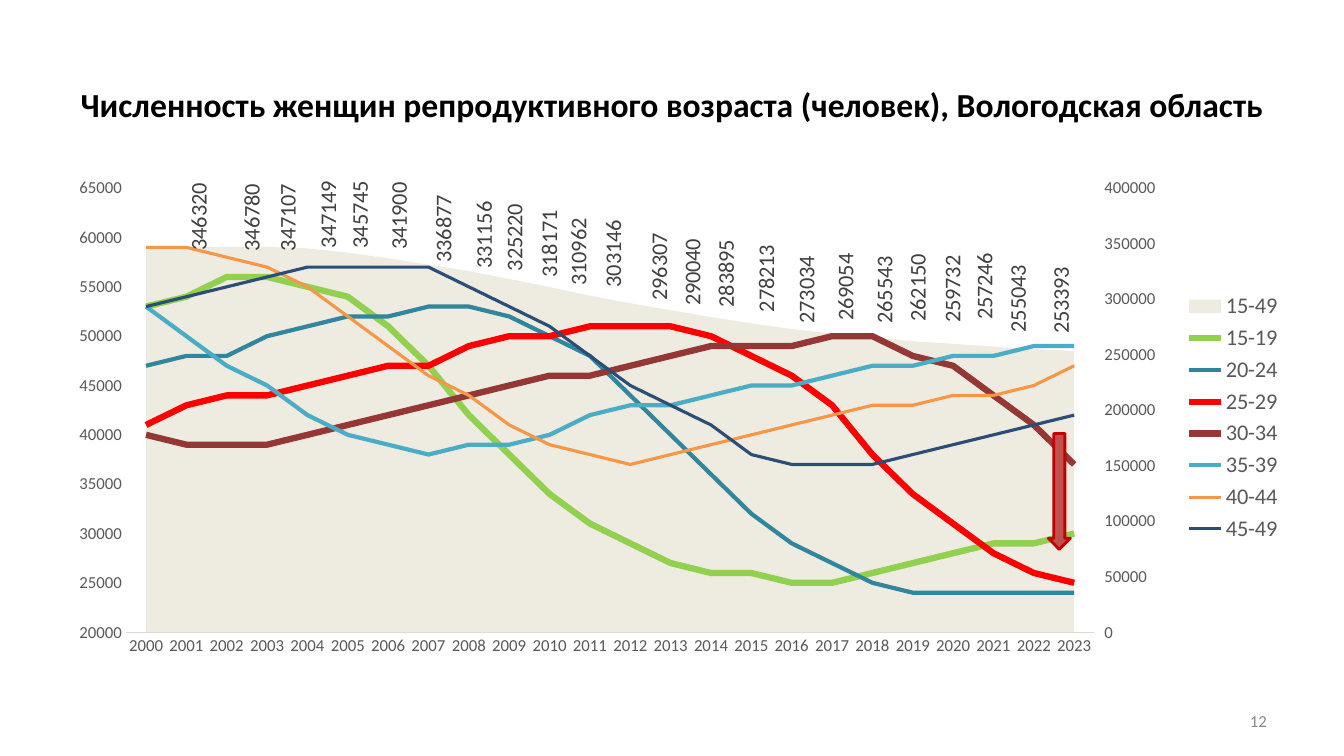
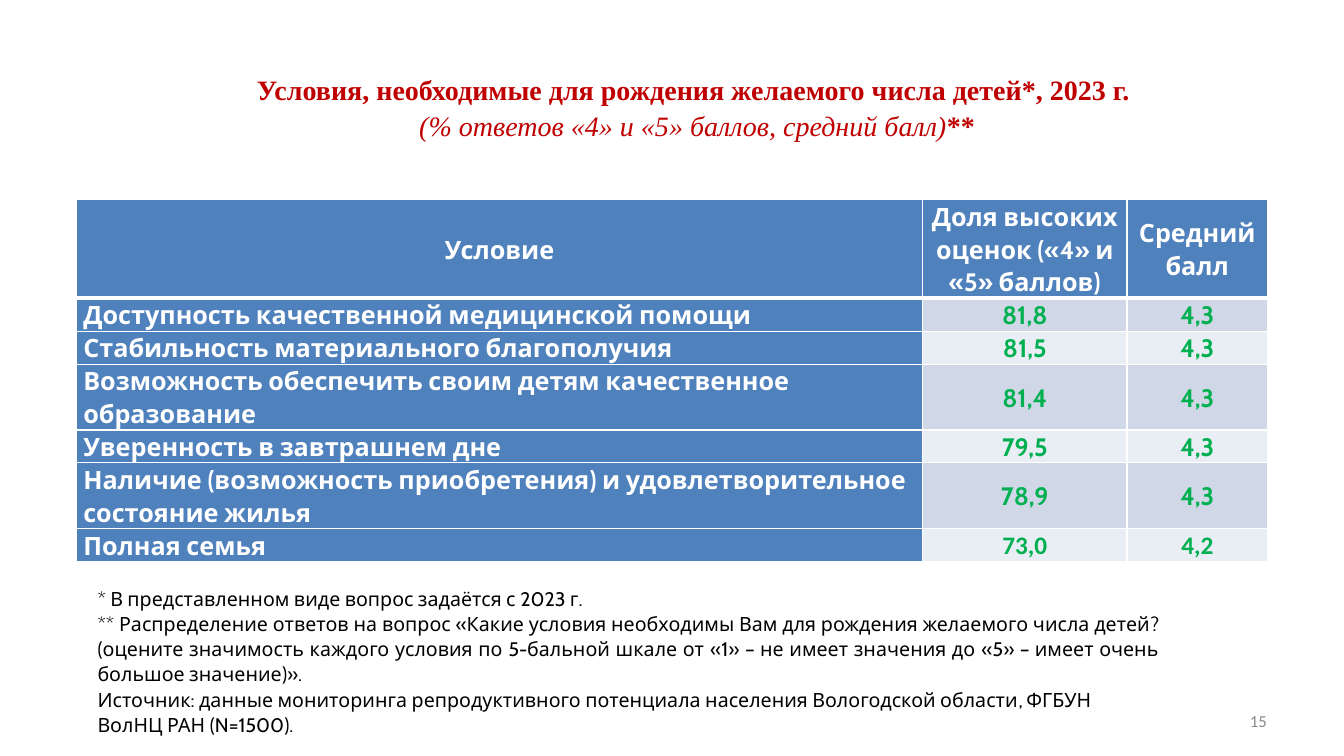
from copy import deepcopy
from dataclasses import dataclass
from typing import Any

from pptx import Presentation
from pptx.chart.axis import CategoryAxis, ValueAxis
from pptx.chart.chart import Chart
from pptx.chart.data import CategoryChartData
from pptx.dml.color import RGBColor
from pptx.enum.chart import (XL_AXIS_CROSSES, XL_CHART_TYPE, XL_LEGEND_POSITION, XL_MARKER_STYLE,
                             XL_TICK_LABEL_POSITION, XL_TICK_MARK)
from pptx.enum.shapes import MSO_SHAPE
from pptx.enum.text import MSO_ANCHOR, PP_ALIGN
from pptx.oxml import parse_xml
from pptx.oxml.ns import nsdecls
from pptx.slide import Slide
from pptx.util import Pt

LEFT, CENTER, RIGHT, JUSTIFY = PP_ALIGN.LEFT, PP_ALIGN.CENTER, PP_ALIGN.RIGHT, PP_ALIGN.JUSTIFY
TOP, MIDDLE = MSO_ANCHOR.TOP, MSO_ANCHOR.MIDDLE
AREA, NO_MARKER, LEGEND_RIGHT = XL_CHART_TYPE.AREA, XL_MARKER_STYLE.NONE, XL_LEGEND_POSITION.RIGHT
TICK_NONE, TICK_OUTSIDE = XL_TICK_MARK.NONE, XL_TICK_MARK.OUTSIDE
CROSS_MAXIMUM, CROSS_MINIMUM = XL_AXIS_CROSSES.MAXIMUM, XL_AXIS_CROSSES.MINIMUM
LABELS_HIGH = XL_TICK_LABEL_POSITION.HIGH
DOWN_ARROW = MSO_SHAPE.DOWN_ARROW

BLACK, WHITE, GRAY, DARK_GRAY, PALE_GRAY = "000000", "FFFFFF", "595959", "404040", "D9D9D9"
DARK_RED, BLUE, GREEN, BEIGE = "C00000", "4F81BD", "00B050", "EEECE1"
ROW_FILLS = ("D0D8E8", "E9EDF4")
TABLE_SPACING = 1.07
ROW_LINE = 23.5
TOTAL_LIMIT = 400000
PLOT = {"x": 0.06, "y": 0.04, "w": 0.78, "h": 0.89}

TITLE_FORMAT = {"name": "Calibri", "size": Pt(24), "bold": True, "color": BLACK}
NUMBER_FORMAT = {"name": "Calibri", "size": Pt(12), "color": "898989"}
AXIS_FORMAT = {"name": "Calibri", "size": Pt(12), "color": GRAY}
LEGEND_FORMAT = {**AXIS_FORMAT, "size": Pt(16)}
LABEL_FORMAT = {**LEGEND_FORMAT, "color": DARK_GRAY}
SURVEY_TITLE_FORMAT = {"name": "Times New Roman", "size": Pt(20), "bold": True, "italic": False, "color": DARK_RED}
SUBTITLE_FORMAT = {**SURVEY_TITLE_FORMAT, "bold": False, "italic": True}
CELL_FORMAT = {"name": "Cabin", "size": Pt(18), "bold": True, "color": WHITE}
NOTE_FORMAT = {"name": "Cabin", "size": Pt(14), "color": BLACK}


@dataclass(frozen=True)
class Box:
    left: float
    top: float
    width: float
    height: float

    def lengths(self) -> tuple[Pt, Pt, Pt, Pt]:
        return Pt(self.left), Pt(self.top), Pt(self.width), Pt(self.height)


@dataclass(frozen=True)
class Run:
    text: str
    format: dict[str, Any]


@dataclass(frozen=True)
class Line:
    runs: tuple[Run, ...]
    alignment: PP_ALIGN = LEFT
    spacing: float = 1.0
    indent: float = 0


@dataclass(frozen=True)
class AgeGroup:
    name: str
    color: str
    width: float
    thousands: tuple[int, ...]


@dataclass(frozen=True)
class Condition:
    text: str
    share: str
    score: str
    lines: int = 1
    value_font: str = "Cabin"


CHART_BOX = Box(36.7, 120.2, 887, 356.4)
NUMBER_BOX = Box(688, 500.4, 224, 28.8)
YEARS = [str(year) for year in range(2000, 2024)]
TOTALS = (346320, 346780, 347107, 347149, 345745, 341900, 336877, 331156, 325220, 318171, 310962, 303146,
          296307, 290040, 283895, 278213, 273034, 269054, 265543, 262150, 259732, 257246, 255043, 253393)
LABEL_SHIFTS = (
    (38, -22), (47, -21), (44, -21), (44, -23), (38, -24), (37, -26), (40, -21), (40, -21),
    (33, -24), (29, -25), (21, -25), (17, -30), (21, -26), (16, -27), (11, -31), (11, -32),
    (11, -28), (10, -33), (9, -34), (4, -38), (0, -39), (-6, -43), (-11, -36), (-9, -36),
)
AGE_GROUPS = (
    AgeGroup("15-19", "92D050", 4.5, (53, 54, 56, 56, 55, 54, 51, 47, 42, 38, 34, 31,
                                      29, 27, 26, 26, 25, 25, 26, 27, 28, 29, 29, 30)),
    AgeGroup("20-24", "31859C", 3, (47, 48, 48, 50, 51, 52, 52, 53, 53, 52, 50, 48,
                                    44, 40, 36, 32, 29, 27, 25, 24, 24, 24, 24, 24)),
    AgeGroup("25-29", "FF0000", 4.5, (41, 43, 44, 44, 45, 46, 47, 47, 49, 50, 50, 51,
                                      51, 51, 50, 48, 46, 43, 38, 34, 31, 28, 26, 25)),
    AgeGroup("30-34", "953735", 4.5, (40, 39, 39, 39, 40, 41, 42, 43, 44, 45, 46, 46,
                                      47, 48, 49, 49, 49, 50, 50, 48, 47, 44, 41, 37)),
    AgeGroup("35-39", "4BACC6", 3, (53, 50, 47, 45, 42, 40, 39, 38, 39, 39, 40, 42,
                                    43, 43, 44, 45, 45, 46, 47, 47, 48, 48, 49, 49)),
    AgeGroup("40-44", "F79646", 2.25, (59, 59, 58, 57, 55, 52, 49, 46, 44, 41, 39, 38,
                                       37, 38, 39, 40, 41, 42, 43, 43, 44, 44, 45, 47)),
    AgeGroup("45-49", "2C4D75", 2.25, (53, 54, 55, 56, 57, 57, 57, 57, 55, 53, 51, 48,
                                       45, 43, 41, 38, 37, 37, 37, 38, 39, 40, 41, 42)),
)
HEADERS = ("Условие", "Доля высоких оценок («4» и «5» баллов)", "Средний балл")
CONDITIONS = (
    Condition("Доступность качественной медицинской помощи", "81,8", "4,3"),
    Condition("Стабильность материального благополучия", "81,5", "4,3"),
    Condition("Возможность обеспечить своим детям качественное образование", "81,4", "4,3", 2),
    Condition("Уверенность в завтрашнем дне", "79,5", "4,3"),
    Condition("Наличие (возможность приобретения) и удовлетворительное состояние жилья", "78,9", "4,3", 2),
    Condition("Полная семья", "73,0", "4,2", 1, "Calibri"),
)
NOTES = (
    ("* В представленном виде вопрос задаётся с 2023 г.", JUSTIFY),
    ("** Распределение ответов на вопрос «Какие условия необходимы Вам для рождения желаемого числа детей? "
     "(оцените значимость каждого условия по 5-бальной шкале от «1» – не имеет значения до «5» – имеет очень "
     "большое значение)».", JUSTIFY),
    ("Источник: данные мониторинга репродуктивного потенциала населения Вологодской области, "
     "ФГБУН ВолНЦ РАН (N=1500).", LEFT),
)


def rgb(color: str) -> RGBColor:
    return RGBColor.from_string(color)


def apply_format(font: Any, values: dict[str, Any]) -> None:
    for name, value in values.items():
        if name == "color":
            font.color.rgb = rgb(value)
        else:
            setattr(font, name, value)


def fill_solid(target: Any, color: str) -> None:
    target.fill.solid()
    target.fill.fore_color.rgb = rgb(color)


def write_lines(frame: Any, lines: list[Line]) -> None:
    for index, line in enumerate(lines):
        paragraph = frame.add_paragraph() if index else frame.paragraphs[0]
        paragraph.alignment = line.alignment
        paragraph.line_spacing = line.spacing
        paragraph.space_before = Pt(0)
        if line.indent:
            paragraph._p.get_or_add_pPr().set("indent", str(Pt(line.indent)))
        for item in line.runs:
            run = paragraph.add_run()
            run.text = item.text
            apply_format(run.font, item.format)


def place_text(shape: Any, lines: list[Line], anchor: MSO_ANCHOR) -> None:
    frame = shape.text_frame
    frame.word_wrap = True
    frame.vertical_anchor = anchor
    write_lines(frame, lines)


def add_text(slide: Slide, box: Box, lines: list[Line], anchor: MSO_ANCHOR) -> None:
    place_text(slide.shapes.add_textbox(*box.lengths()), lines, anchor)


def add_titled_slide(presentation: Any, box: Box, lines: list[Line], anchor: MSO_ANCHOR, number: str) -> Slide:
    slide = presentation.slides.add_slide(presentation.slide_layouts[5])
    title = slide.shapes.title
    title.left, title.top, title.width, title.height = box.lengths()
    place_text(title, lines, anchor)
    add_text(slide, NUMBER_BOX, [Line((Run(number, NUMBER_FORMAT),), RIGHT)], MIDDLE)
    return slide


def layout_xml(values: dict[str, float], inner: bool = False) -> Any:
    modes = '<c:layoutTarget val="inner"/><c:xMode val="edge"/><c:yMode val="edge"/>' if inner else ""
    places = "".join(f'<c:{name} val="{value:.5f}"/>' for name, value in values.items())
    return parse_xml(f'<c:layout {nsdecls("c")}><c:manualLayout>{modes}{places}</c:manualLayout></c:layout>')


def split_lines_from_area(chart: Chart) -> None:
    plot_area = chart.element.xpath("c:chart/c:plotArea")[0]
    area = plot_area.xpath("c:areaChart")[0]
    axes = plot_area.xpath("c:catAx | c:valAx")
    line_chart = parse_xml(f'<c:lineChart {nsdecls("c")}><c:grouping val="standard"/>'
                           '<c:varyColors val="0"/></c:lineChart>')
    for series in area.xpath("c:ser")[1:]:
        line_chart.append(series)
    line_chart.append(parse_xml(f'<c:marker {nsdecls("c")} val="1"/>'))
    area.addnext(line_chart)
    new_ids = {axis.xpath("c:axId")[0].get("val"): str(5001 + index) for index, axis in enumerate(axes)}
    previous = axes[-1]
    for axis in axes:
        twin = deepcopy(axis)
        for reference in twin.xpath("c:axId | c:crossAx"):
            reference.set("val", new_ids[reference.get("val")])
        line_chart.append(deepcopy(twin.xpath("c:axId")[0]))
        previous.addnext(twin)
        previous = twin
    plot_area.xpath("c:valAx[1]/c:axPos")[0].set("val", "r")
    for crossing in plot_area.xpath("c:valAx/c:crossBetween"):
        crossing.set("val", "between")
    for old_layout in plot_area.xpath("c:layout"):
        plot_area.remove(old_layout)
    plot_area.insert(0, layout_xml(PLOT, True))


def format_axes(chart: Chart) -> None:
    area_categories, line_categories = map(CategoryAxis, chart.element.xpath(".//c:catAx"))
    area_values, line_values = map(ValueAxis, chart.element.xpath(".//c:valAx"))
    scales = ((area_values, 0, TOTAL_LIMIT, 50000, TICK_OUTSIDE), (line_values, 20000, 65000, 5000, TICK_NONE))
    for axis, minimum, maximum, step, tick in scales:
        axis.minimum_scale, axis.maximum_scale, axis.major_unit = minimum, maximum, step
        axis.major_tick_mark = tick
        axis.format.line.fill.background()
    for axis in (area_values, line_values, line_categories):
        axis.has_major_gridlines = False
        apply_format(axis.tick_labels.font, AXIS_FORMAT)
    area_values.tick_label_position = LABELS_HIGH
    area_categories.visible = False
    area_categories.crosses = CROSS_MAXIMUM
    line_categories.crosses = CROSS_MINIMUM
    line_values.crosses = CROSS_MINIMUM
    line_categories.major_tick_mark = TICK_NONE
    line_categories.format.line.color.rgb = rgb(PALE_GRAY)


def label_totals(chart: Chart, series: Any) -> None:
    series.data_labels.show_value = True
    apply_format(series.data_labels.font, LABEL_FORMAT)
    for index in range(len(TOTALS)):
        apply_format(series.points[index].data_label.font, LABEL_FORMAT)
    labels = chart.element.xpath(".//c:areaChart/c:ser/c:dLbls")[0]
    for leader_lines in labels.xpath("c:showLeaderLines"):
        labels.remove(leader_lines)
    labels.append(parse_xml(f'<c:showLeaderLines {nsdecls("c")} val="0"/>'))
    labels.append(parse_xml(
        f'<c:extLst {nsdecls("c")}><c:ext uri="{{CE6537A1-D6FC-4f65-9D91-7224C49458BB}}" '
        'xmlns:c15="http://schemas.microsoft.com/office/drawing/2012/chart">'
        '<c15:showLeaderLines val="0"/></c:ext></c:extLst>'))
    for body in labels.xpath(".//a:bodyPr"):
        body.set("rot", "-5400000")
        body.set("vert", "horz")
    for label, total, (right, down) in zip(labels.xpath("c:dLbl"), TOTALS, LABEL_SHIFTS):
        half_height = PLOT["h"] * total / TOTAL_LIMIT / 2
        label.insert(1, layout_xml({"x": right / CHART_BOX.width, "y": down / CHART_BOX.height - half_height}))


def add_population_chart(slide: Slide) -> None:
    data = CategoryChartData()
    data.categories = YEARS
    data.add_series("15-49", TOTALS)
    for group in AGE_GROUPS:
        data.add_series(group.name, [value * 1000 for value in group.thousands])
    chart = slide.shapes.add_chart(AREA, *CHART_BOX.lengths(), data).chart
    chart.has_title = False
    apply_format(chart.font, {**LABEL_FORMAT, "color": BLACK})
    split_lines_from_area(chart)
    format_axes(chart)
    area_plot, line_plot = chart.plots
    area_plot.vary_by_categories = line_plot.vary_by_categories = False
    total_series = area_plot.series[0]
    fill_solid(total_series.format, BEIGE)
    label_totals(chart, total_series)
    for series, group in zip(line_plot.series, AGE_GROUPS):
        series.smooth = False
        series.marker.style = NO_MARKER
        series.format.line.color.rgb = rgb(group.color)
        series.format.line.width = Pt(group.width)
    chart.has_legend = True
    chart.legend.position = LEGEND_RIGHT
    chart.legend.include_in_layout = False
    apply_format(chart.legend.font, LEGEND_FORMAT)


def add_decline_arrow(slide: Slide) -> None:
    arrow = slide.shapes.add_shape(DOWN_ARROW, *Box(748.8, 309.6, 15.8, 82.8).lengths())
    arrow.shadow.inherit = False
    fill_solid(arrow, "C0504D")
    arrow.line.color.rgb = rgb(DARK_RED)
    arrow.line.width = Pt(2)


def format_cell(cell: Any, line: Line, fill: str, anchor: MSO_ANCHOR, bottom: float) -> None:
    cell.margin_left = cell.margin_right = Pt(5)
    cell.margin_top = cell.margin_bottom = Pt(0)
    cell.vertical_anchor = anchor
    write_lines(cell.text_frame, [line])
    properties = cell._tc.get_or_add_tcPr()
    for side, width in {"lnL": 1, "lnR": 1, "lnT": 1, "lnB": bottom}.items():
        properties.append(parse_xml(f'<a:{side} {nsdecls("a")} w="{Pt(width)}"><a:solidFill>'
                                    f'<a:srgbClr val="{WHITE}"/></a:solidFill></a:{side}>'))
    fill_solid(cell, fill)


def add_conditions_table(slide: Slide) -> None:
    row_lines = [3] + [condition.lines for condition in CONDITIONS]
    box = Box(54.5, 142.6, 851, ROW_LINE * sum(row_lines))
    table = slide.shapes.add_table(len(row_lines), len(HEADERS), *box.lengths()).table
    for column, width in zip(table.columns, (604.5, 146, 100.5)):
        column.width = Pt(width)
    for row, count in zip(table.rows, row_lines):
        row.height = Pt(ROW_LINE * count)
    for column, text in enumerate(HEADERS):
        line = Line((Run(text, CELL_FORMAT),), CENTER, TABLE_SPACING)
        format_cell(table.cell(0, column), line, BLUE, MIDDLE, 3)
    for row, condition in enumerate(CONDITIONS, 1):
        name = Line((Run(condition.text, CELL_FORMAT),), LEFT, TABLE_SPACING)
        format_cell(table.cell(row, 0), name, BLUE, TOP, 1)
        value_format = {**CELL_FORMAT, "name": condition.value_font, "color": GREEN}
        for column, text in enumerate((condition.share, condition.score), 1):
            line = Line((Run(text, value_format),), CENTER, TABLE_SPACING)
            format_cell(table.cell(row, column), line, ROW_FILLS[(row - 1) % 2], MIDDLE, 1)


def main() -> None:
    presentation = Presentation()
    presentation.slide_width, presentation.slide_height = Pt(960), Pt(540)

    heading = "Численность женщин репродуктивного возраста (человек), Вологодская область"
    slide = add_titled_slide(presentation, Box(48, 40.3, 864, 67.7),
                             [Line((Run(heading, TITLE_FORMAT),), CENTER)], MIDDLE, "12")
    add_population_chart(slide)
    add_decline_arrow(slide)

    survey_title = "Условия, необходимые для рождения желаемого числа детей*, 2023 г. "
    subtitle = (Run("(% ответов «4» и «5» баллов, средний балл)", SUBTITLE_FORMAT), Run("**", SURVEY_TITLE_FORMAT))
    lines = [Line(runs, CENTER, TABLE_SPACING, 35.3)
             for runs in ((Run(survey_title, SURVEY_TITLE_FORMAT),), subtitle)]
    slide = add_titled_slide(presentation, Box(114.5, 46.8, 731.5, 57.6), lines, TOP, "15")
    add_conditions_table(slide)
    notes = [Line((Run(text, NOTE_FORMAT),), alignment, TABLE_SPACING) for text, alignment in NOTES]
    add_text(slide, Box(62.6, 414.5, 772.6, 79.2), notes, TOP)

    presentation.save("out.pptx")


if __name__ == "__main__":
    main()
